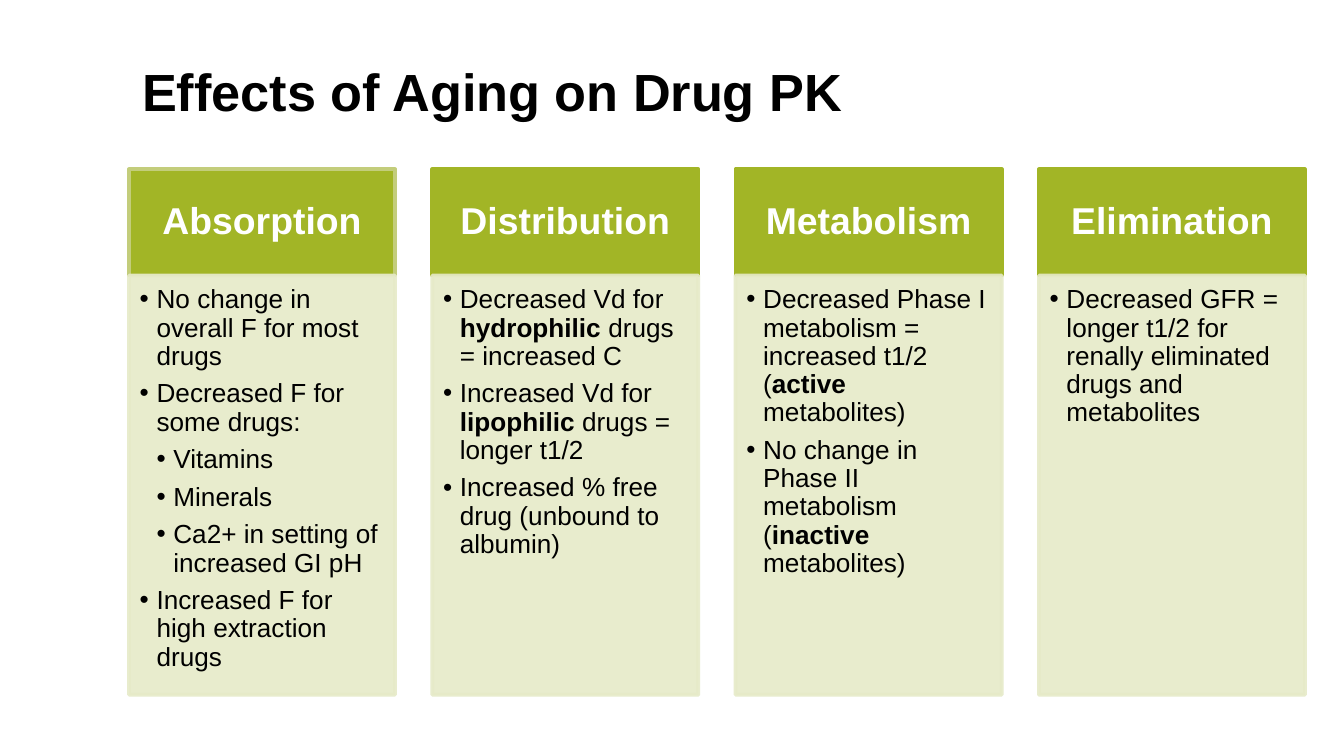
from dataclasses import dataclass

from lxml.etree import SubElement
from pptx import Presentation
from pptx.dml.color import RGBColor
from pptx.enum.shapes import MSO_SHAPE
from pptx.enum.text import MSO_ANCHOR, PP_ALIGN
from pptx.oxml.ns import qn
from pptx.util import Inches, Pt


@dataclass(frozen=True)
class Theme:
    font: str = "Arial"
    title_size: int = 28
    heading_size: int = 20
    body_size: int = 14
    black: str = "000000"
    white: str = "FFFFFF"
    green: str = "A2B526"
    light_green: str = "C3CD7B"
    pale_green: str = "E6EAC8"


THEME = Theme()
BULLET_INDENT = Inches(1) // 8

# Each column: heading, heading outline, list of (level, text); ** marks bold.
COLUMNS = [
    ("Absorption", THEME.light_green, [
        (1, "No change in overall F for most drugs"),
        (1, "Decreased F for some drugs:"),
        (2, "Vitamins"),
        (2, "Minerals"),
        (2, "Ca2+ in setting of increased GI pH"),
        (1, "Increased F for high extraction drugs"),
    ]),
    ("Distribution", THEME.green, [
        (1, "Decreased Vd for **hydrophilic** drugs = increased C"),
        (1, "Increased Vd for **lipophilic** drugs = longer t1/2"),
        (1, "Increased % free drug (unbound to albumin)"),
    ]),
    ("Metabolism", THEME.green, [
        (1, "Decreased Phase I metabolism = increased t1/2 (**active** metabolites)"),
        (1, "No change in Phase II metabolism (**inactive** metabolites)"),
    ]),
    ("Elimination", THEME.green, [
        (1, "Decreased GFR = longer t1/2 for renally eliminated drugs and metabolites"),
    ]),
]


def set_up_frame(frame, margins, anchor):
    frame.word_wrap = True
    frame.vertical_anchor = anchor
    (frame.margin_left, frame.margin_top,
     frame.margin_right, frame.margin_bottom) = map(Inches, margins)


def style_paragraph(paragraph, size, color, bold=False, align=PP_ALIGN.LEFT):
    paragraph.alignment = align
    paragraph.line_spacing = 0.9
    font = paragraph.font
    font.name = THEME.font
    font.size = Pt(size)
    font.bold = bold
    font.color.rgb = RGBColor.from_string(color)


def add_panel(slide, left, top, width, height, fill, outline):
    panel = slide.shapes.add_shape(MSO_SHAPE.RECTANGLE, Inches(left), Inches(top),
                                   Inches(width), Inches(height))
    panel.shadow.inherit = False
    panel.fill.solid()
    panel.fill.fore_color.rgb = RGBColor.from_string(fill)
    panel.line.color.rgb = RGBColor.from_string(outline)
    panel.line.width = Pt(2)
    return panel


def set_opacity(panel, percent):
    """Apply the opacity to both the fill and the outline."""
    for color in panel._element.spPr.iter(qn("a:srgbClr")):
        SubElement(color, qn("a:alpha"), val=str(percent * 1000))


def add_bullet(paragraph, level, text):
    paragraph.level = level
    properties = paragraph._p.get_or_add_pPr()
    properties.set("marL", str(level * BULLET_INDENT))
    properties.set("indent", str(-BULLET_INDENT))
    SubElement(properties, qn("a:buFont"), typeface=THEME.font)
    SubElement(properties, qn("a:buChar"), char="•")
    paragraph.space_after = Pt(5)
    style_paragraph(paragraph, THEME.body_size, THEME.black)
    for index, part in enumerate(text.split("**")):
        run = paragraph.add_run()
        run.text = part
        if index % 2:
            run.font.bold = True


def add_title(slide, left, top, width, height, text):
    title = slide.shapes.add_textbox(Inches(left), Inches(top),
                                     Inches(width), Inches(height))
    frame = title.text_frame
    set_up_frame(frame, (0.1, 0, 0.1, 0), MSO_ANCHOR.MIDDLE)
    frame.text = text
    style_paragraph(frame.paragraphs[0], THEME.title_size, THEME.black, bold=True)


def add_column(slide, left, top, width, height, heading, outline, bullets):
    header_height = 0.79
    header = add_panel(slide, left, top, width, header_height, THEME.green, outline)
    frame = header.text_frame
    set_up_frame(frame, (0.16, 0.09, 0.16, 0.09), MSO_ANCHOR.MIDDLE)
    frame.text = heading
    style_paragraph(frame.paragraphs[0], THEME.heading_size, THEME.white,
                    bold=True, align=PP_ALIGN.CENTER)

    body = add_panel(slide, left, top + header_height, width, height - header_height,
                     THEME.pale_green, THEME.pale_green)
    set_opacity(body, 90)
    frame = body.text_frame
    set_up_frame(frame, (0.08, 0.08, 0.11, 0.12), MSO_ANCHOR.TOP)
    for index, (level, text) in enumerate(bullets):
        paragraph = frame.add_paragraph() if index else frame.paragraphs[0]
        add_bullet(paragraph, level, text)


def add_columns(slide, left, top, width, height, columns):
    """Spread equal columns over the full width of the box."""
    column_width = 1.98
    step = (width - column_width) / (len(columns) - 1)
    for index, column in enumerate(columns):
        add_column(slide, left + index * step, top, column_width, height, *column)


def main():
    presentation = Presentation()
    presentation.slide_width = Inches(10)
    presentation.slide_height = Inches(10) * 9 // 16
    slide = presentation.slides.add_slide(presentation.slide_layouts[6])
    add_columns(slide, 0.96, 1.26, 8.75, 3.91, COLUMNS)
    add_title(slide, 0.96, 0.2, 8.85, 1.01, "Effects of Aging on Drug PK")
    presentation.save("out.pptx")


if __name__ == "__main__":
    main()
